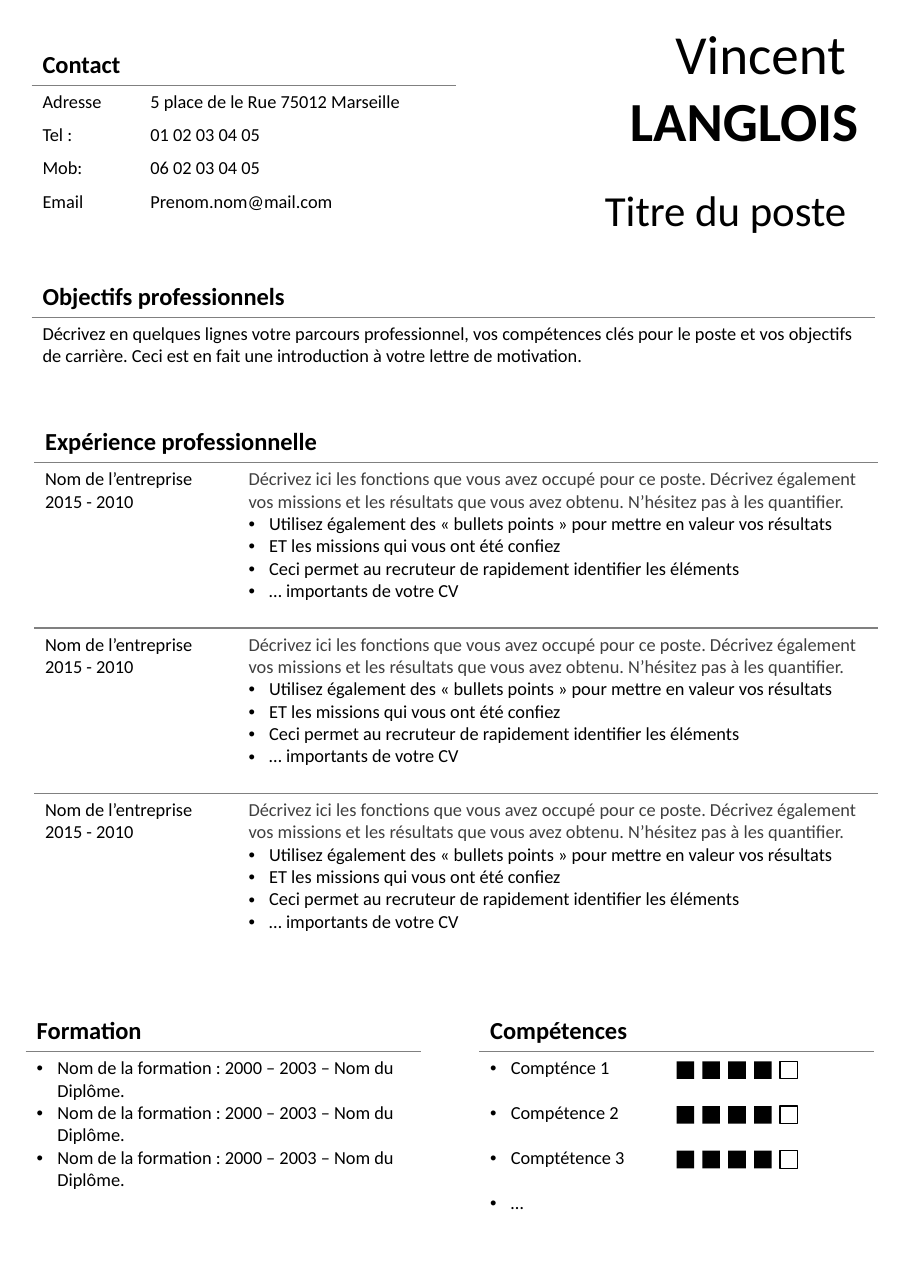
from lxml.etree import SubElement, Element
from pptx import Presentation
from pptx.dml.color import RGBColor
from pptx.enum.shapes import MSO_SHAPE
from pptx.enum.text import PP_ALIGN
from pptx.oxml.ns import qn
from pptx.util import Pt

COLOURS = {"text": "000000", "muted": "404040", "rule": "808080"}
FONT = "Calibri"
HEADER_HEIGHT = 26.7
INDENT = 13.5

deck = Presentation()
deck.slide_width, deck.slide_height = Pt(595.44), Pt(841.68)
page = deck.slides.add_slide(deck.slide_layouts[6])


def write(para, text, size, bold=False, colour="text", bullet=False):
    if bullet:
        properties = para._p.get_or_add_pPr()
        properties.set("marL", str(Pt(INDENT)))
        properties.set("indent", str(-Pt(INDENT)))
        SubElement(properties, qn("a:buFont"), typeface="Arial")
        SubElement(properties, qn("a:buChar"), char="•")
    span = para.add_run()
    span.text = text
    span.font.name = FONT
    span.font.size = Pt(size)
    span.font.bold = bold
    span.font.color.rgb = RGBColor.from_string(COLOURS[colour])


def add_section(title, left, top, widths, heights, rows, title_columns=1, ruled_rows=(0,), gap=0):
    """Each body cell is a list of (text, colour, bullet) paragraphs."""
    heights = [HEADER_HEIGHT] + heights
    last = len(widths) - 1
    table = page.shapes.add_table(len(heights), len(widths), Pt(left), Pt(top),
                                  Pt(sum(widths)), Pt(sum(heights))).table
    table.first_row = table.horz_banding = False
    for column, width in zip(table.columns, widths):
        column.width = Pt(width)
    for row, height in zip(table.rows, heights):
        row.height = Pt(height)

    # Heading
    if title_columns > 1:
        table.cell(0, 0).merge(table.cell(0, title_columns - 1))
    write(table.cell(0, 0).text_frame.paragraphs[0], title, 16, bold=True)

    # Body text: the last entry of a row takes the columns that remain
    for row_index, row in enumerate(rows, 1):
        if len(row) <= last:
            table.cell(row_index, len(row) - 1).merge(table.cell(row_index, last))
        for column_index, lines in enumerate(row):
            frame = table.cell(row_index, column_index).text_frame
            for index, (text, colour, bullet) in enumerate(lines):
                para = frame.add_paragraph() if index else frame.paragraphs[0]
                write(para, text, 12, colour=colour, bullet=bullet)
                if gap and index < len(lines) - 1:
                    para.space_after = Pt(gap)

    # Clear fills, open sides and grey rules below the chosen rows
    for row_index in range(len(heights)):
        sides = ["a:lnL", "a:lnR"]
        sides += [side for side, above in (("a:lnT", row_index - 1), ("a:lnB", row_index))
                  if above in ruled_rows]
        for column_index in range(len(widths)):
            cell = table.cell(row_index, column_index)
            cell.fill.background()
            if not cell.text_frame.text:
                SubElement(cell.text_frame.paragraphs[0]._p, qn("a:endParaRPr"), sz="1200")
            properties = cell._tc.get_or_add_tcPr()
            for position, side in enumerate(sides):
                line = Element(qn(side), w=str(Pt(1)))
                if side in ("a:lnL", "a:lnR"):
                    SubElement(line, qn("a:noFill"))
                else:
                    fill = SubElement(line, qn("a:solidFill"))
                    SubElement(fill, qn("a:srgbClr"), val=COLOURS["rule"])
                properties.insert(position, line)


# Name and job title
for left, top, width, height, size, lines in (
    (275, 9.4, 293.1, 94.3, 36, [("Vincent ", False), ("LANGLOIS", True)]),
    (311, 116.6, 249.2, 41, 28, [("Titre du poste", False)]),
):
    box = page.shapes.add_textbox(Pt(left), Pt(top), Pt(width), Pt(height))
    box.text_frame.word_wrap = True
    for index, (text, bold) in enumerate(lines):
        para = box.text_frame.add_paragraph() if index else box.text_frame.paragraphs[0]
        para.alignment = PP_ALIGN.RIGHT
        write(para, text, size, bold)

# Contact
contacts = [
    ("Adresse", "5 place de le Rue 75012 Marseille"),
    ("Tel :", "01 02 03 04 05"),
    ("Mob:", "06 02 03 04 05"),
    ("Email", "Prenom.nom@mail.com"),
]
add_section("Contact", 20.6, 29, [70.5, 68.4, 138.3], [21.8] * 4,
            [[[(text, "text", False)] for text in entry] for entry in contacts],
            title_columns=2)

# Objectives
objective = ("Décrivez en quelques lignes votre parcours professionnel, vos compétences clés "
             "pour le poste et vos objectifs de carrière. Ceci est en fait une introduction "
             "à votre lettre de motivation.")
add_section("Objectifs professionnels", 20.6, 180.7, [551.5], [36],
            [[[(objective, "text", False)]]])

# Experience: the same entry three times
employer = [("Nom de l’entreprise", "text", False), ("2015 - 2010", "text", False)]
duties = [
    ("Décrivez ici les fonctions que vous avez occupé pour ce poste. Décrivez également vos "
     "missions et les résultats que vous avez obtenu. N’hésitez pas à les quantifier.",
     "muted", False),
    ("Utilisez également des « bullets points » pour mettre en valeur vos résultats",
     "text", True),
    ("ET les missions qui vous ont été confiez", "text", True),
    ("Ceci permet au recruteur de rapidement identifier les éléments", "text", True),
    ("… importants de votre CV", "text", True),
]
add_section("Expérience professionnelle", 22.3, 275.7, [133, 418.3], [108.1, 108.1, 94],
            [[employer, duties]] * 3, title_columns=2, ruled_rows=(0, 1, 2))

# Education
degree = ("Nom de la formation : 2000 – 2003 – Nom du Diplôme.", "text", True)
add_section("Formation", 16.8, 660.6, [97.9, 160.4], [93.5], [[[degree] * 3]])

# Skills, one blank line's height apart
skills = ["Compténce 1", "Compétence 2", "Comptétence 3", "…"]
add_section("Compétences", 313.2, 660.6, [139.6, 118.7], [108],
            [[[(skill, "text", True) for skill in skills]]], gap=14.65)

# Skill ratings: four filled squares out of five
for row in range(3):
    for column in range(5):
        square = page.shapes.add_shape(MSO_SHAPE.RECTANGLE, Pt(442.2 + 16.9 * column),
                                       Pt(693.6 + 29.2 * row), Pt(11.5), Pt(11.5))
        square.shadow.inherit = False
        if column < 4:
            square.fill.solid()
            square.fill.fore_color.rgb = RGBColor.from_string(COLOURS["text"])
            square.line.fill.background()
        else:
            square.fill.background()
            square.line.color.rgb = RGBColor.from_string(COLOURS["text"])
            square.line.width = Pt(0.75)

deck.save("out.pptx")
